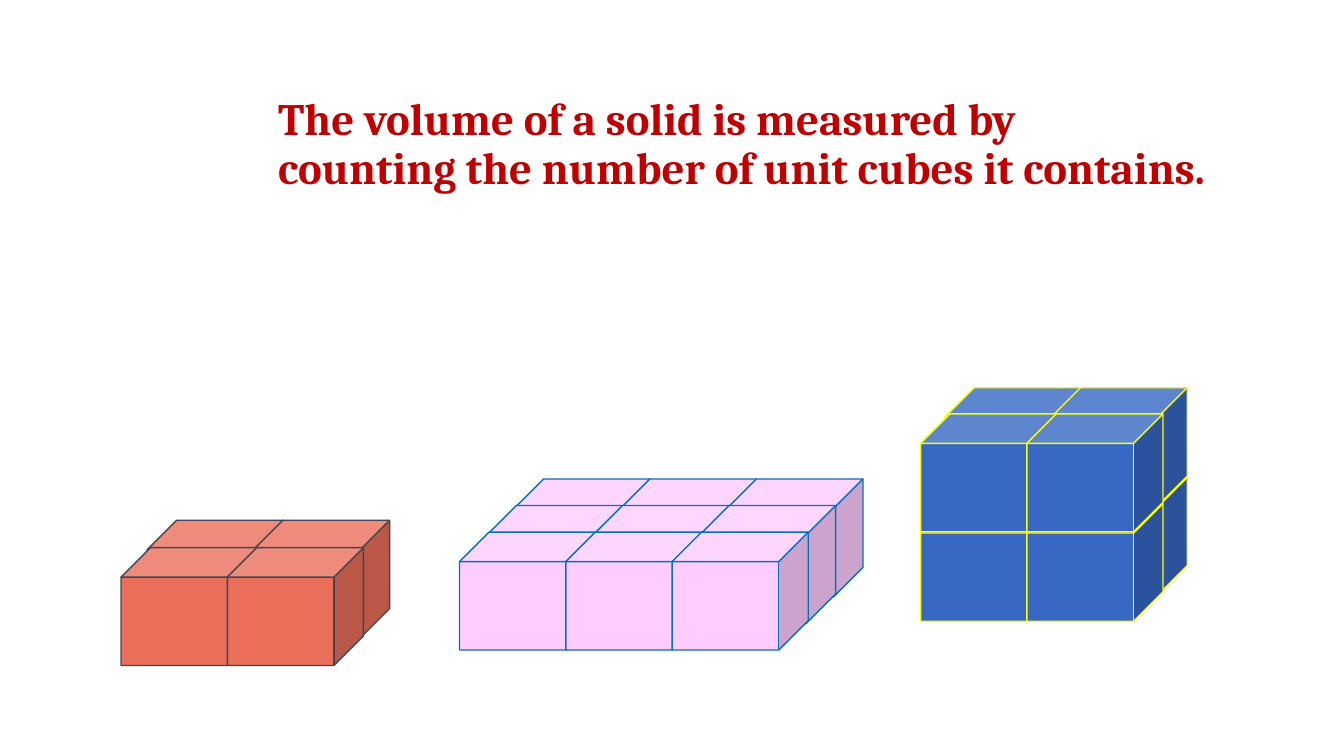
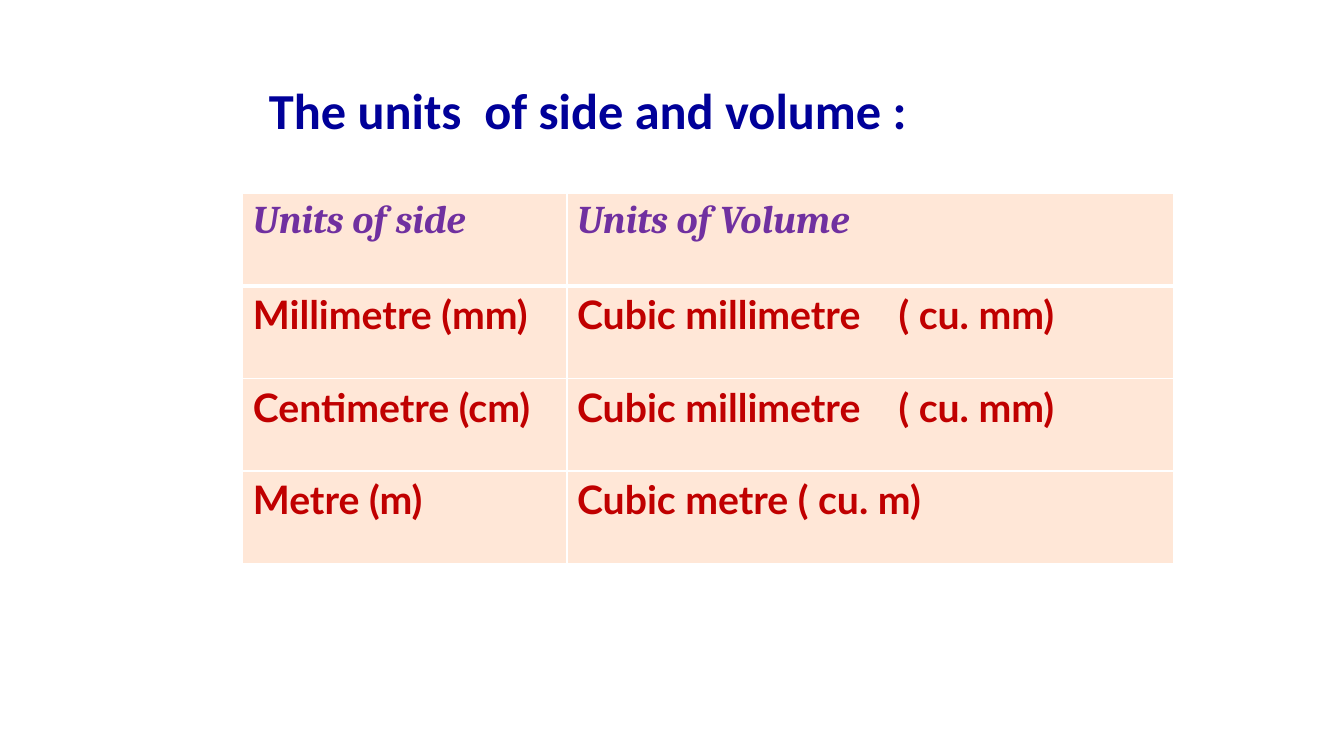
from dataclasses import dataclass
from itertools import product

import pptx
import pptx.dml.color
import pptx.enum.shapes
import pptx.enum.text
import pptx.oxml.ns
import pptx.util
from lxml import etree

Cm = pptx.util.Cm
Pt = pptx.util.Pt
qn = pptx.oxml.ns.qn

COLOURS = {
    "red": "C00000", "navy": "000099", "purple": "7030A0",
    "peach": "FFE7D7", "white": "FFFFFF",
    "coral": "EB6E5A", "slate": "414752",
    "pink": "FFCCFF", "azure": "0070C0",
    "blue": "3668C4", "yellow": "FFFF00",
}
CUBE_W, CUBE_H = 3.43, 2.97
COLUMN_STEP, LAYER_RISE = 2.68, 2.26
ROW_HEIGHT = 2.33
COLUMN_WIDTHS = (8.17, 15.29)
SYMBOL_TAB = 8.1


@dataclass
class TextStyle:
    font: str
    size: int
    colour: str
    italic: bool = False


@dataclass
class Solid:
    """A block of unit cubes, placed by its bottom front left cube."""
    left: float
    top: float
    columns: int
    rows: int
    layers: int
    row_dx: float
    row_dy: float
    fill: str
    line: str


HEADER = TextStyle("Cambria", 28, "purple", italic=True)
BODY = TextStyle("Lato", 28, "red")

SOLIDS = [
    Solid(3.05, 13.8, 2, 2, 1, 0.66, 0.69, "coral", "slate"),
    Solid(23.2, 12.69, 2, 2, 2, 0.61, 0.66, "blue", "yellow"),
    Solid(11.58, 13.41, 3, 3, 1, 0.69, 0.67, "pink", "azure"),
]

UNITS = [
    ("Units of side", "Units of Volume"),
    ("Millimetre (mm)", "Cubic millimetre\t( cu. mm)"),
    ("Centimetre (cm)", "Cubic millimetre\t( cu. mm)"),
    ("Metre (m)", "Cubic metre ( cu. m)"),
]


def rgb(name: str) -> pptx.dml.color.RGBColor:
    return pptx.dml.color.RGBColor.from_string(COLOURS[name])


def format_runs(p, style: TextStyle) -> None:
    for r in p.runs:
        r.font.name = style.font
        r.font.size = Pt(style.size)
        r.font.bold = True
        r.font.italic = style.italic
        r.font.color.rgb = rgb(style.colour)


def add_title(s, text: str, left: float, top: float, width: float,
              height: float, style: TextStyle) -> None:
    tf = s.shapes.add_textbox(Cm(left), Cm(top), Cm(width), Cm(height)).text_frame
    tf.word_wrap = True
    tf.vertical_anchor = pptx.enum.text.MSO_ANCHOR.MIDDLE
    tf.text = text
    p = tf.paragraphs[0]
    p.line_spacing = 0.9
    format_runs(p, style)


def add_solid(s, solid: Solid) -> None:
    """Stack the cubes from the bottom up and from back to front."""
    for layer, row, column in product(range(solid.layers),
                                      reversed(range(solid.rows)),
                                      range(solid.columns)):
        left = solid.left + column * COLUMN_STEP + row * solid.row_dx
        top = solid.top - layer * LAYER_RISE - row * solid.row_dy
        sp = s.shapes.add_shape(pptx.enum.shapes.MSO_SHAPE.CUBE,
                                Cm(left), Cm(top), Cm(CUBE_W), Cm(CUBE_H))
        sp.shadow.inherit = False
        sp.fill.solid()
        sp.fill.fore_color.rgb = rgb(solid.fill)
        sp.line.color.rgb = rgb(solid.line)
        sp.line.width = Pt(1)


def set_border(cell, side: str, width: int) -> None:
    tc_pr = cell._tc.get_or_add_tcPr()
    ln = etree.SubElement(tc_pr, qn(f"a:ln{side}"), w=str(Pt(width)))
    fill = etree.SubElement(ln, qn("a:solidFill"))
    etree.SubElement(fill, qn("a:srgbClr"), val=COLOURS["white"])


def add_tab_stop(p, position: float) -> None:
    tabs = etree.SubElement(p._p.get_or_add_pPr(), qn("a:tabLst"))
    etree.SubElement(tabs, qn("a:tab"), pos=str(Cm(position)), algn="l")


def add_units_table(s, left: float, top: float) -> None:
    table = s.shapes.add_table(
        len(UNITS), len(COLUMN_WIDTHS), Cm(left), Cm(top),
        Cm(sum(COLUMN_WIDTHS)), Cm(ROW_HEIGHT * len(UNITS))).table
    table.horz_banding = False
    for column, width in zip(table.columns, COLUMN_WIDTHS):
        column.width = Cm(width)
    for i, texts in enumerate(UNITS):
        for j, text in enumerate(texts):
            cell = table.cell(i, j)
            for side in "LRTB":
                under_header = (i, side) in ((0, "B"), (1, "T"))
                set_border(cell, side, 3 if under_header else 1)
            cell.fill.solid()
            cell.fill.fore_color.rgb = rgb("peach")
            cell.text_frame.text = text
            p = cell.text_frame.paragraphs[0]
            if "\t" in text:
                add_tab_stop(p, SYMBOL_TAB)
            format_runs(p, BODY if i else HEADER)


def main() -> None:
    prs = pptx.Presentation()
    prs.slide_width, prs.slide_height = Cm(33.87), Cm(19.05)
    blank = prs.slide_layouts[6]

    s = prs.slides.add_slide(blank)
    add_title(s, "The volume of a solid is measured by\v"
                 "counting the number of unit cubes it contains.",
              6.76, 1.7, 25.02, 3.94, TextStyle("Cambria", 32, "red"))
    for solid in SOLIDS:
        add_solid(s, solid)

    s = prs.slides.add_slide(blank)
    add_title(s, "The units  of side and volume :",
              6.53, 1.02, 17.22, 3.68, TextStyle("Calibri", 36, "navy"))
    add_units_table(s, 6.12, 4.88)

    prs.save("out.pptx")


if __name__ == "__main__":
    main()
